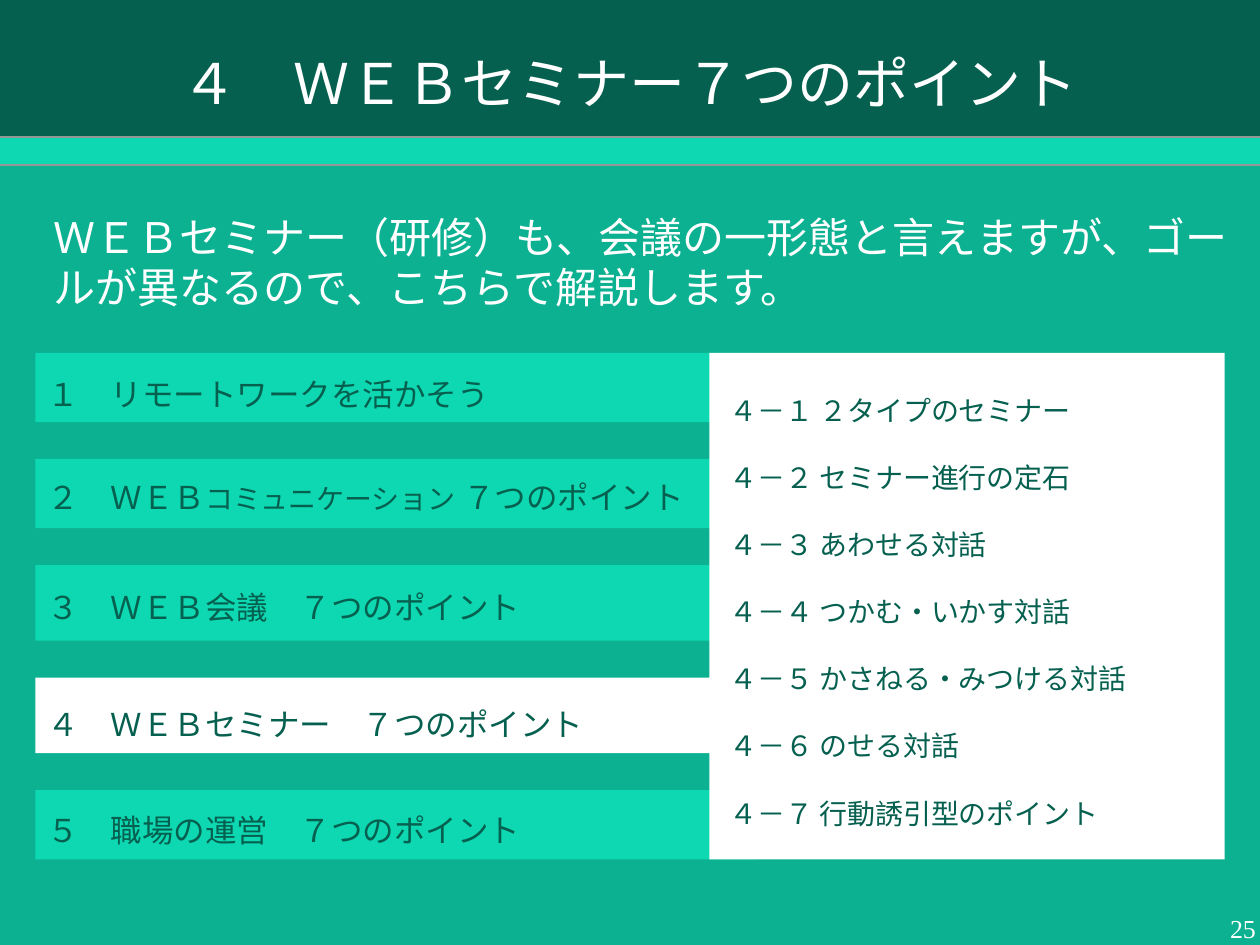
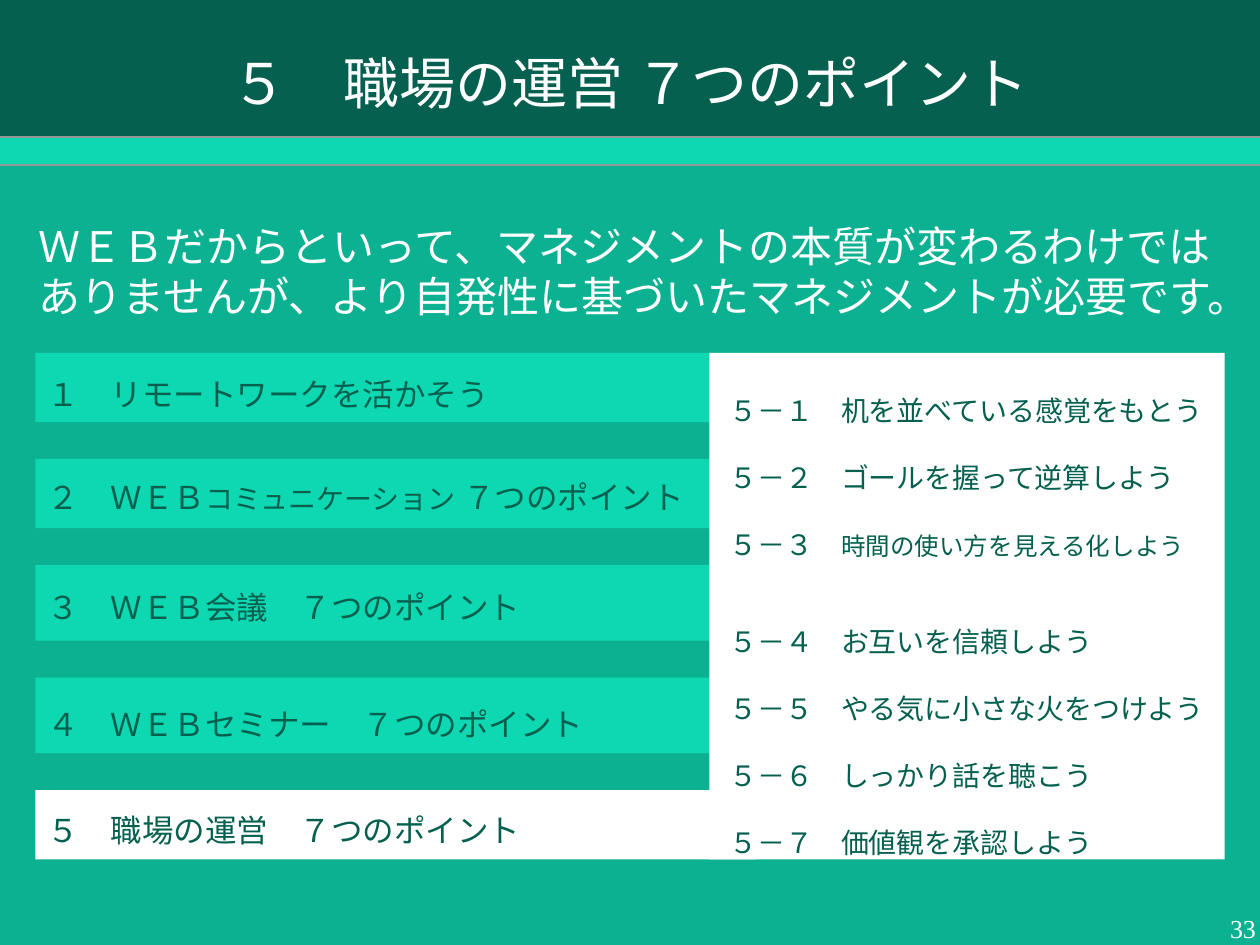
from lxml.etree import SubElement
from pptx import Presentation
from pptx.dml.color import RGBColor
from pptx.enum.shapes import MSO_SHAPE
from pptx.enum.text import MSO_ANCHOR, MSO_AUTO_SIZE, PP_ALIGN
from pptx.oxml.ns import qn
from pptx.util import Inches, Pt

COLORS = {
    "background": "0BB191",
    "dark": "06604F",
    "bright": "0ED8B2",
    "white": "FFFFFF",
    "outline": "969696",
}
BODY_FONT = "Noto Sans CJK JP"
NUMBER_FONT = "Times New Roman"
LINE_FACTOR = 1.2

CHAPTERS = [
    {"runs": [("１　リモートワークを活かそう", 18)], "height": 0.55, "label_drop": 0.13},
    {"runs": [("２　ＷＥＢ", 18), ("コミュニケーション", 16), (" ７つのポイント", 18)],
     "height": 0.55, "label_drop": 0.1},
    {"runs": [("３　ＷＥＢ会議　７つのポイント", 18)], "height": 0.6, "label_drop": 0.13},
    {"runs": [("４　ＷＥＢセミナー　７つのポイント", 18)], "height": 0.6, "label_drop": 0.17},
    {"runs": [("５　職場の運営　７つのポイント", 18)], "height": 0.55, "label_drop": 0.12},
]

SLIDES = [
    {
        "title": "４　ＷＥＢセミナー７つのポイント",
        "intro": "ＷＥＢセミナー（研修）も、会議の一形態と言えますが、ゴールが異なるので、こちらで解説します。",
        "intro_at": (0.33, 1.63),
        "current": 4,
        "number": "25",
        "points": [
            [("４－１ ２タイプのセミナー", 16)],
            [("４－２ セミナー進行の定石", 16)],
            [("４－３ あわせる対話", 16)],
            [("４－４ つかむ・いかす対話", 16)],
            [("４－５ かさねる・みつける対話", 16)],
            [("４－６ のせる対話", 16)],
            [("４－７ 行動誘引型のポイント", 16)],
        ],
        "wide_gap_before": None,
    },
    {
        "title": "５　職場の運営 ７つのポイント",
        "intro": "ＷＥＢだからといって、マネジメントの本質が変わるわけではありませんが、より自発性に基づいたマネジメントが必要です。",
        "intro_at": (0.21, 1.7),
        "current": 5,
        "number": "33",
        "points": [
            [("５－１　机を並べている感覚をもとう", 16)],
            [("５－２　ゴールを握って逆算しよう", 16)],
            [("５－３　", 16), ("時間の使い方を見える化しよう", 14)],
            [("５－４　お互いを信頼しよう", 16)],
            [("５－５　やる気に小さな火をつけよう", 16)],
            [("５－６　しっかり話を聴こう", 16)],
            [("５－７　価値観を承認しよう", 16)],
        ],
        "wide_gap_before": 4,
    },
]

LIST_LEFT, LIST_TOP, LIST_HEIGHT = 0.28, 2.8, 4.02
BAR_WIDTH, LABEL_WIDTH = 5.72, 5.59
PANEL_LEFT, PANEL_WIDTH = 5.63, 4.09
POINT_LINE = 16 * LINE_FACTOR
WIDE_GAP = 14 * LINE_FACTOR


def rgb(name):
    return RGBColor.from_string(COLORS[name])


def add_runs(p, runs, color, font=BODY_FONT):
    for text, size in runs:
        r = p.add_run()
        r.text = text
        r.font.size = Pt(size)
        r.font.color.rgb = rgb(color)
        r.font.name = font
        SubElement(r.font._element, qn("a:ea"), typeface=font)


def set_margins(tf, left, top, right, bottom):
    tf.margin_left, tf.margin_top = Inches(left), Inches(top)
    tf.margin_right, tf.margin_bottom = Inches(right), Inches(bottom)


def add_rect(shapes, left, top, width, height, fill, line=None):
    sp = shapes.add_shape(MSO_SHAPE.RECTANGLE, Inches(left), Inches(top),
                          Inches(width), Inches(height))
    sp.shadow.inherit = False
    sp.fill.solid()
    sp.fill.fore_color.rgb = rgb(fill)
    if line:
        sp.line.color.rgb = rgb(line)
        sp.line.width = Pt(1)
    else:
        sp.line.fill.background()
    return sp


def add_text(shapes, left, top, width, height, runs, color):
    tf = shapes.add_textbox(Inches(left), Inches(top), Inches(width),
                            Inches(height)).text_frame
    tf.word_wrap = True
    set_margins(tf, 0.1, 0.05, 0.1, 0.05)
    p = tf.paragraphs[0]
    p.line_spacing = Pt(runs[0][1] * LINE_FACTOR)
    add_runs(p, runs, color)


def add_title(s, text):
    sp = s.shapes.title
    sp.left, sp.top, sp.width, sp.height = 0, 0, Inches(10), Inches(1.31)
    sp.fill.solid()
    sp.fill.fore_color.rgb = rgb("dark")
    tf = sp.text_frame
    tf.auto_size = MSO_AUTO_SIZE.NONE
    tf.vertical_anchor = MSO_ANCHOR.MIDDLE
    set_margins(tf, 0.07, 0.04, 0.07, 0.04)
    p = tf.paragraphs[0]
    p.alignment = PP_ALIGN.CENTER
    add_runs(p, [(text, 32)], "white")


def add_number(s, number):
    tf = s.shapes.add_textbox(Inches(9.72), Inches(7.21), Inches(0.29),
                              Inches(0.32)).text_frame
    tf.word_wrap = False
    tf.vertical_anchor = MSO_ANCHOR.MIDDLE
    set_margins(tf, 0, 0.04, 0, 0.04)
    p = tf.paragraphs[0]
    p.alignment = PP_ALIGN.CENTER
    add_runs(p, [(number, 14.8)], "white", NUMBER_FONT)


def add_chapters(s, current):
    gap = (LIST_HEIGHT - sum(c["height"] for c in CHAPTERS)) / (len(CHAPTERS) - 1)
    top = LIST_TOP
    for number, chapter in enumerate(CHAPTERS, 1):
        shapes = s.shapes.add_group_shape().shapes
        add_rect(shapes, LIST_LEFT, top, BAR_WIDTH, chapter["height"],
                 "white" if number == current else "bright")
        add_text(shapes, LIST_LEFT, top + chapter["label_drop"], LABEL_WIDTH, 0.36,
                 chapter["runs"], "dark")
        top += chapter["height"] + gap


def add_points(s, points, wide_gap_before):
    sp = add_rect(s.shapes, PANEL_LEFT, LIST_TOP, PANEL_WIDTH, LIST_HEIGHT, "white")
    tf = sp.text_frame
    tf.word_wrap = True
    tf.vertical_anchor = MSO_ANCHOR.TOP
    set_margins(tf, 0.16, 0.32, 0.1, 0.05)
    for number, runs in enumerate(points, 1):
        p = tf.paragraphs[0] if number == 1 else tf.add_paragraph()
        p.alignment = PP_ALIGN.LEFT
        p.line_spacing = Pt(POINT_LINE)
        if number > 1:
            extra = WIDE_GAP if number == wide_gap_before else 0
            p.space_before = Pt(POINT_LINE + extra)
        add_runs(p, runs, "dark")


def build_slide(prs, content):
    s = prs.slides.add_slide(prs.slide_layouts[5])
    add_title(s, content["title"])
    add_number(s, content["number"])
    add_text(s.shapes, *content["intro_at"], 9.66, 0.86, [(content["intro"], 24)], "white")
    add_chapters(s, content["current"])
    add_points(s, content["points"], content["wide_gap_before"])
    add_rect(s.shapes, -0.01, 1.09, 10.03, 0.22, "bright", "outline")


def main():
    prs = Presentation()
    prs.slide_width, prs.slide_height = Inches(10), Inches(7.5)
    fill = prs.slide_master.background.fill
    fill.solid()
    fill.fore_color.rgb = rgb("background")
    for content in SLIDES:
        build_slide(prs, content)
    prs.save("out.pptx")


if __name__ == "__main__":
    main()
